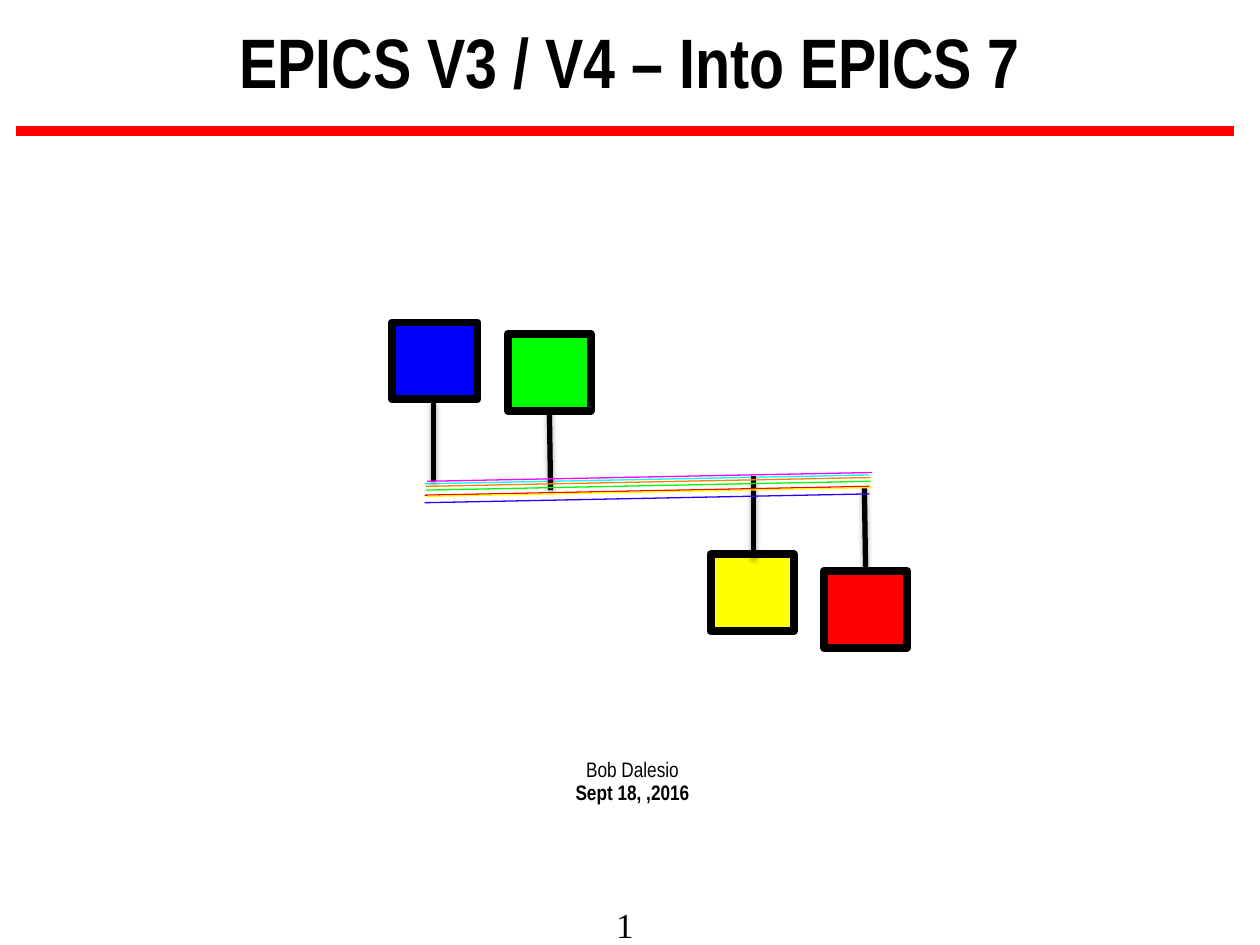
from lxml import etree
from pptx import Presentation
from pptx.dml.color import RGBColor
from pptx.enum.shapes import MSO_CONNECTOR, MSO_SHAPE
from pptx.enum.text import MSO_ANCHOR, PP_ALIGN
from pptx.oxml.ns import qn
from pptx.util import Inches, Pt

STRAIGHT = MSO_CONNECTOR.STRAIGHT
RECTANGLE = MSO_SHAPE.RECTANGLE
TOP, MIDDLE = MSO_ANCHOR.TOP, MSO_ANCHOR.MIDDLE
LEFT, CENTER = PP_ALIGN.LEFT, PP_ALIGN.CENTER

BLACK = "000000"
RED = "FF0000"


def color(hex_value):
    return RGBColor.from_string(hex_value)


class SlideBuilder:
    """Holds the slide and its text style."""

    heading_font = "Arial Narrow"
    number_font = "Times New Roman"

    def __init__(self, slide):
        self.slide = slide

    def text(self, box, lines, size, font=heading_font, align=CENTER,
             anchor=TOP, margins=(0.1, 0.05), spacing=0.9):
        """Add a text box; lines are (wording, bold) pairs."""
        frame = self.slide.shapes.add_textbox(*map(Inches, box)).text_frame
        frame.word_wrap = True
        frame.vertical_anchor = anchor
        frame.margin_left = frame.margin_right = Inches(margins[0])
        frame.margin_top = frame.margin_bottom = Inches(margins[1])
        for index, (wording, bold) in enumerate(lines):
            paragraph = frame.add_paragraph() if index else frame.paragraphs[0]
            paragraph.text = wording
            paragraph.alignment = align
            paragraph.line_spacing = spacing
            paragraph.font.name = font
            paragraph.font.size = Pt(size)
            paragraph.font.bold = bold
            paragraph.font.color.rgb = color(BLACK)

    def line(self, start, end, hex_value, width, shadow=False):
        connector = self.slide.shapes.add_connector(
            STRAIGHT, *map(Inches, (*start, *end)))
        connector.line.color.rgb = color(hex_value)
        connector.line.width = Pt(width)
        effects = etree.SubElement(connector._element.spPr, qn("a:effectLst"))
        if shadow:
            outer = etree.SubElement(
                effects, qn("a:outerShdw"), blurRad=str(Pt(3.1)),
                dist=str(Pt(1.8)), dir="5400000", rotWithShape="0")
            black = etree.SubElement(outer, qn("a:srgbClr"), val=BLACK)
            etree.SubElement(black, qn("a:alpha"), val="35000")

    def node(self, left, top, hex_value, width=0.66):
        square = self.slide.shapes.add_shape(
            RECTANGLE, *map(Inches, (left, top, width, 0.61)))
        square.shadow.inherit = False
        square.fill.solid()
        square.fill.fore_color.rgb = color(hex_value)
        square.line.color.rgb = color(BLACK)
        square.line.width = Pt(4.5)

    def stem(self, start, end):
        self.line(start, end, BLACK, 3, shadow=True)

    def bus_wire(self, left, top, hex_value):
        """Add one wire of the bus; all share the same length and slope."""
        self.line((left, top), (left + 3.53, top - 0.07), hex_value, 0.75)


def main():
    deck = Presentation()
    deck.slide_width, deck.slide_height = Inches(10), Inches(7.5)
    page = SlideBuilder(deck.slides.add_slide(deck.slide_layouts[6]))

    page.line((9.79, 1.04), (0.13, 1.04), RED, 6)
    page.text((4.89, 7.17, 0.43, 0.33), [("1", False)], 20,
              font=page.number_font, align=LEFT, margins=(0, 0), spacing=1)
    page.text((0, 0, 10, 1.05), [("EPICS V3 / V4 – Into EPICS 7", True)], 40,
              anchor=MIDDLE, margins=(0, 0.05))
    page.text((1.37, 5.98, 7.3, 0.46),
              [("Bob Dalesio", False), ("Sept 18, ,2016", True)], 12)

    page.node(3.11, 2.56, "0000FF", width=0.68)
    page.node(4.03, 2.65, "00FF00")
    page.node(6.54, 4.53, RED)
    page.bus_wire(3.37, 3.84, "00FFFF")
    page.stem((6.86, 3.86), (6.87, 4.51))
    page.node(5.64, 4.4, "FFFF00")
    page.stem((4.37, 3.89), (4.36, 3.24))
    page.stem((3.44, 3.82), (3.44, 3.18))
    page.stem((5.98, 3.78), (5.98, 4.42))

    for left, top, hex_value in [
        (3.38, 3.86, "FF8000"),
        (3.39, 3.82, "FF00FF"),
        (3.38, 3.89, "00FF00"),
        (3.37, 3.93, RED),
        (3.39, 3.94, "FFFF00"),
        (3.37, 3.99, "2900FF"),
    ]:
        page.bus_wire(left, top, hex_value)

    deck.save("out.pptx")


if __name__ == "__main__":
    main()
